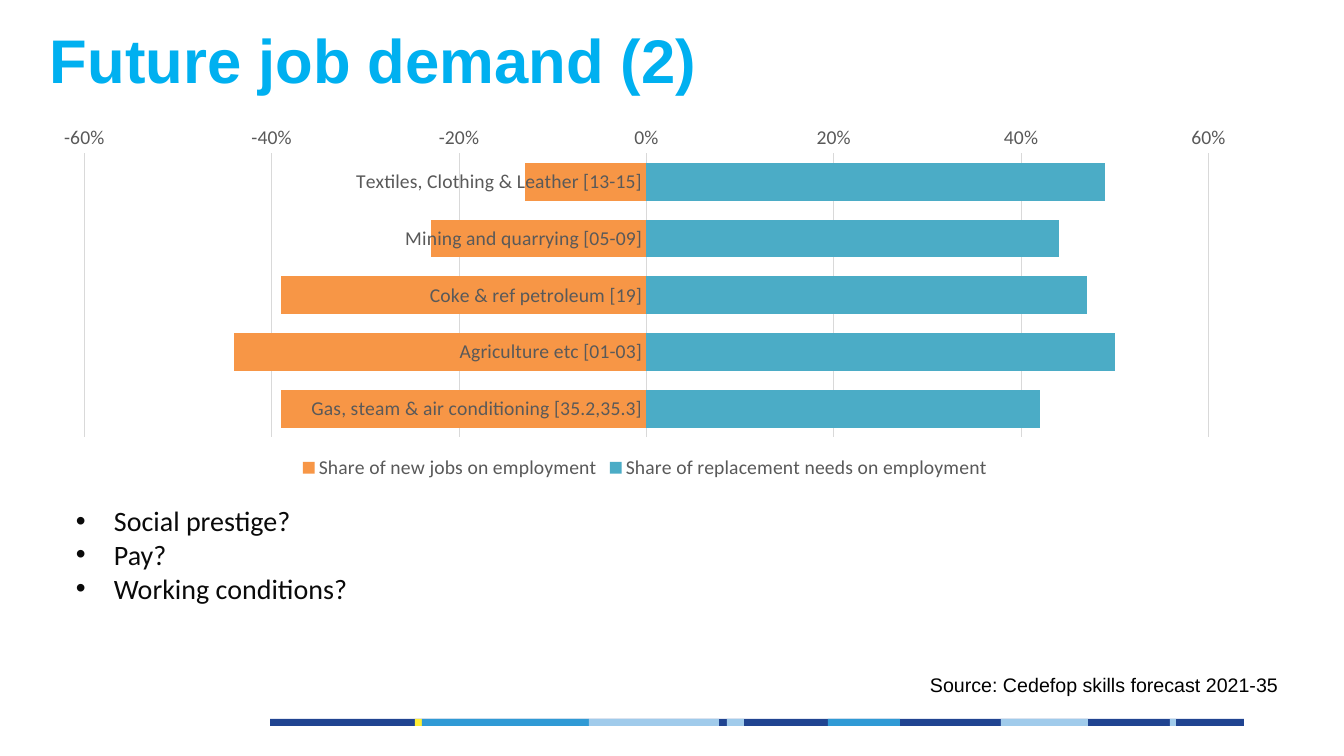
from pptx import Presentation
from pptx.chart.data import CategoryChartData
from pptx.dml.color import RGBColor as RGB
from pptx.enum.chart import XL_CHART_TYPE as CT, XL_LEGEND_POSITION as LP, XL_TICK_MARK as TM
from pptx.enum.shapes import MSO_SHAPE as MS
from pptx.oxml import parse_xml
from pptx.oxml.ns import nsdecls
from pptx.util import Pt

PX = 914400 / 100.8
COLORS = dict(title="00B0F0", text="0A0A0A", black="000000", axis="595959", grid="D9D9D9",
              new="F79646", replace="4BACC6",
              navy="204491", yellow="FFEE35", blue="309AD5", pale="A0CBEB")
FORMATS = dict(
    title=("title", dict(name="Arial", size=Pt(44), bold=True)),
    source=("black", dict(name="Arial", size=Pt(14))),
    question=("text", dict(name="Calibri", size=Pt(20))),
    chart=("black", dict(name="Calibri", size=Pt(14))),
    label=("axis", dict(name="Calibri", size=Pt(14))),
)


def px(*lengths):
    return [round(n * PX) for n in lengths]


def color(name):
    return RGB.from_string(COLORS[name])


def set_font(font, style):
    color_name, values = FORMATS[style]
    font.color.rgb = color(color_name)
    for key, value in values.items():
        setattr(font, key, value)


def set_fill(fill, color_name):
    fill.solid()
    fill.fore_color.rgb = color(color_name)


def add_bullet(p, indent):
    pPr = p._p.get_or_add_pPr()
    pPr.set("marL", str(indent))
    pPr.set("indent", str(-indent))
    for tag in ('buFont {} typeface="Arial"', 'buChar {} char="•"'):
        pPr.append(parse_xml("<a:" + tag.format(nsdecls("a")) + "/>"))


def add_text(s, box, lines, style, bullet=False):
    tf = s.shapes.add_textbox(*px(*box)).text_frame
    tf.word_wrap = True
    for i, line in enumerate(lines):
        p = tf.add_paragraph() if i else tf.paragraphs[0]
        if bullet:
            add_bullet(p, *px(38))
        r = p.add_run()
        r.text = line
        set_font(r.font, style)


def add_footer_band(s, box):
    left, top, width, height = box
    # Base strip first, then the coloured pieces: offset, width, colour
    pieces = [(0, width, "navy"), (145, 7, "yellow"), (152, 167, "blue"), (319, 130, "pale"),
              (457, 17, "pale"), (558, 72, "blue"), (731, 87, "pale"), (900, 6, "pale")]
    for offset, w, name in pieces:
        sp = s.shapes.add_shape(MS.RECTANGLE, *px(left + offset, top, w, height))
        sp.shadow.inherit = False
        set_fill(sp.fill, name)
        sp.line.fill.background()


def add_demand_chart(s, box):
    data = CategoryChartData(number_format="0%")
    data.categories = ["Textiles, Clothing & Leather [13-15]", "Mining and quarrying [05-09]",
                       "Coke & ref petroleum [19]", "Agriculture etc [01-03]",
                       "Gas, steam & air conditioning [35.2,35.3]"]
    data.add_series("Share of new jobs on employment", [-0.13, -0.23, -0.39, -0.44, -0.39])
    data.add_series("Share of replacement needs on employment", [0.49, 0.44, 0.47, 0.5, 0.42])
    chart = s.shapes.add_chart(CT.BAR_STACKED, *px(*box), data).chart
    chart.has_title = False
    set_font(chart.font, "chart")

    # Bars
    plot = chart.plots[0]
    plot.gap_width, plot.overlap, plot.vary_by_categories = 50, 100, False
    for series, name in zip(plot.series, ("new", "replace")):
        series.invert_if_negative = False
        set_fill(series.format.fill, name)

    # Axes
    cat, val = chart.category_axis, chart.value_axis
    for axis in (cat, val):
        axis.major_tick_mark = axis.minor_tick_mark = TM.NONE
        set_font(axis.tick_labels.font, "label")
    cat.reverse_order = True
    val.minimum_scale, val.maximum_scale, val.major_unit = -0.6, 0.6, 0.2
    val.tick_labels.number_format = "0%"
    val.tick_labels.number_format_is_linked = False
    val.format.line.fill.background()
    for line in (cat.format.line, val.major_gridlines.format.line):
        line.color.rgb = color("grid")
        line.width = Pt(0.75)

    # Legend
    chart.has_legend = True
    chart.legend.position = LP.BOTTOM
    chart.legend.include_in_layout = False
    set_font(chart.legend.font, "label")


def add_demand_slide(prs):
    s = prs.slides.add_slide(prs.slide_layouts[6])
    add_footer_band(s, (270, 719, 974, 7))
    add_text(s, (40, 17, 895, 159), ["Future job demand (2)"], "title")
    add_text(s, (920, 668, 386, 34), ["Source: Cedefop skills forecast 2021-35"], "source")
    add_demand_chart(s, (40, 118, 1210, 366))
    add_text(s, (66, 499, 1184, 112),
             ["Social prestige?", "Pay?", "Working conditions?"], "question", bullet=True)


def main():
    prs = Presentation()
    prs.slide_width, prs.slide_height = px(1344, 756)
    add_demand_slide(prs)
    prs.save("out.pptx")


if __name__ == "__main__":
    main()
